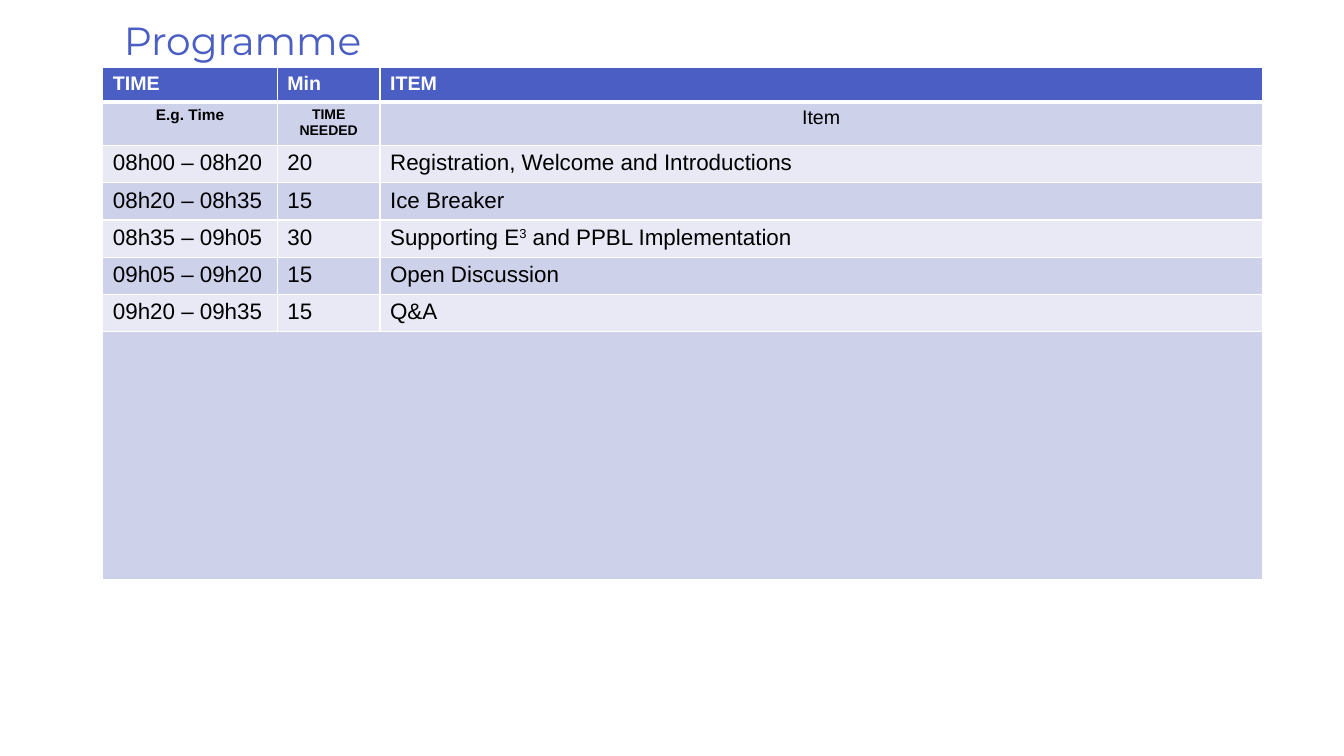
"""Build the programme slide with its timetable."""
from lxml import etree
from pptx import Presentation
from pptx.dml.color import RGBColor
from pptx.enum.text import MSO_AUTO_SIZE, PP_ALIGN
from pptx.oxml.ns import qn
from pptx.util import Inches, Pt

LEFT, CENTER = PP_ALIGN.LEFT, PP_ALIGN.CENTER
FIT_SHAPE = MSO_AUTO_SIZE.SHAPE_TO_FIT_TEXT

INDIGO = RGBColor(0x4B, 0x5E, 0xC4)
BAND_DARK = RGBColor(0xCE, 0xD1, 0xEA)
BAND_LIGHT = RGBColor(0xE8, 0xE9, 0xF5)
BLACK = RGBColor(0, 0, 0)
WHITE = RGBColor(0xFF, 0xFF, 0xFF)

TITLE = "Programme"
HEADER = ("TIME", "Min", "ITEM")
EXAMPLE = ("E.g. Time", "TIME NEEDED", "Item")
SESSIONS = [
    ("08h00 – 08h20", "20", "Registration, Welcome and Introductions"),
    ("08h20 – 08h35", "15", "Ice Breaker"),
    ("08h35 – 09h05", "30", "Supporting E^3^ and PPBL Implementation"),
    ("09h05 – 09h20", "15", "Open Discussion"),
    ("09h20 – 09h35", "15", "Q&A"),
]
ROWS = [HEADER, EXAMPLE, *SESSIONS]
EXAMPLE_STYLES = [(11, True), (10, True), (14, False)]

COLUMN_WIDTHS = [1.73, 1.02, 8.75]
ROW_HEIGHTS = [0.34, 0.42] + [0.37] * len(SESSIONS) + [2.46]
TABLE_LEFT, TABLE_TOP = 1.02, 0.67
THIN, THICK = 1, 3


def add_title(slide):
    box = slide.shapes.add_textbox(Inches(1.13), Inches(0.11), Inches(5.59), Inches(0.63))
    frame = box.text_frame
    frame.word_wrap = True
    frame.auto_size = FIT_SHAPE
    frame.margin_left = frame.margin_right = Inches(0.1)
    frame.margin_top = frame.margin_bottom = Inches(0.1)
    paragraph = frame.paragraphs[0]
    paragraph.text = TITLE
    paragraph.line_spacing = 0.9
    paragraph.font.name = "Montserrat"
    paragraph.font.size = Pt(28)
    paragraph.font.color.rgb = INDIGO


def style_cell(cell, row):
    properties = cell._tc.get_or_add_tcPr()
    widths = {
        "a:lnL": THIN,
        "a:lnR": THIN,
        "a:lnT": THICK if row == 1 else THIN,
        "a:lnB": THICK if row == 0 else THIN,
    }
    for side, width in widths.items():
        line = etree.SubElement(properties, qn(side), w=str(Pt(width)))
        fill = etree.SubElement(line, qn("a:solidFill"))
        etree.SubElement(fill, qn("a:srgbClr"), val=str(WHITE))
    cell.fill.solid()
    cell.fill.fore_color.rgb = INDIGO if row == 0 else (BAND_LIGHT, BAND_DARK)[row % 2]


def write_cell(cell, text, row, column):
    size, bold = 16, False
    if row == 0:
        size, bold = 14, True
    elif row == 1:
        size, bold = EXAMPLE_STYLES[column]
    paragraph = cell.text_frame.paragraphs[0]
    paragraph.alignment = CENTER if row == 1 else LEFT
    font = paragraph.font
    font.name, font.size, font.bold = "Arial", Pt(size), bold
    font.color.rgb = WHITE if row == 0 else BLACK
    for index, piece in enumerate(text.split("^")):
        run = paragraph.add_run()
        run.text = piece
        if index % 2:
            run.font._element.set("baseline", "30000")


def add_timetable(slide):
    frame = slide.shapes.add_table(
        len(ROW_HEIGHTS), len(COLUMN_WIDTHS), Inches(TABLE_LEFT), Inches(TABLE_TOP),
        Inches(sum(COLUMN_WIDTHS)), Inches(sum(ROW_HEIGHTS)))
    table = frame.table
    for column, width in zip(table.columns, COLUMN_WIDTHS):
        column.width = Inches(width)
    for row, height in enumerate(ROW_HEIGHTS):
        table.rows[row].height = Inches(height)
        for column in range(len(COLUMN_WIDTHS)):
            style_cell(table.cell(row, column), row)
    for row, texts in enumerate(ROWS):
        for column, text in enumerate(texts):
            write_cell(table.cell(row, column), text, row, column)
    last = len(ROW_HEIGHTS) - 1
    table.cell(last, 0).merge(table.cell(last, len(COLUMN_WIDTHS) - 1))


def main():
    presentation = Presentation()
    presentation.slide_width = Inches(13.33)
    presentation.slide_height = Inches(7.5)
    slide = presentation.slides.add_slide(presentation.slide_layouts[6])
    add_title(slide)
    add_timetable(slide)
    presentation.save("out.pptx")


if __name__ == "__main__":
    main()
